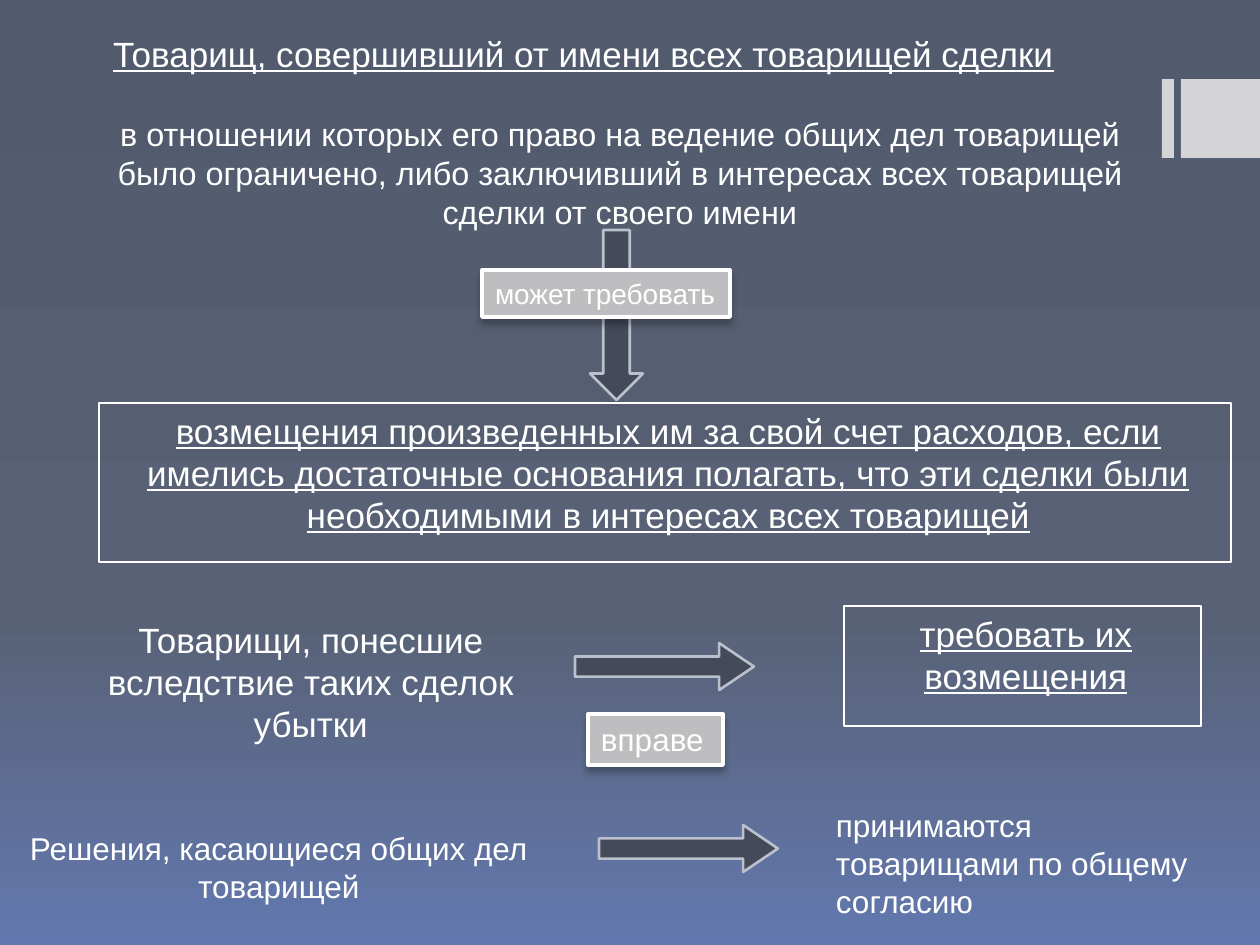
from copy import deepcopy

from pptx import Presentation
from pptx.dml.color import RGBColor
from pptx.enum.shapes import MSO_SHAPE as Shape
from pptx.enum.text import MSO_ANCHOR as Anchor, PP_ALIGN as Align
from pptx.oxml import parse_xml
from pptx.oxml.ns import nsdecls
from pptx.util import Pt

PX = 914400 / 126
WHITE = "FFFFFF"
SHADOW = f"""<a:effectLst {nsdecls('a')}>
  <a:outerShdw blurRad="50800" dist="38100" dir="5400000" rotWithShape="0">
    <a:srgbClr val="000000"><a:alpha val="28000"/></a:srgbClr>
  </a:outerShdw>
</a:effectLst>"""


def add_block(kind, box, fill=None, line=None, line_width=1.5):
    """Add a preset shape at a px box (left, top, width, height)."""
    shape = slide.shapes.add_shape(kind, *(round(v * PX) for v in box))
    shape.shadow.inherit = False
    if fill:
        shape.fill.solid()
        shape.fill.fore_color.rgb = RGBColor.from_string(fill)
    else:
        shape.fill.background()
    if line:
        shape.line.color.rgb = RGBColor.from_string(line)
        shape.line.width = Pt(line_width)
    else:
        shape.line.fill.background()
    return shape


def write(shape, text, size, align=Align.CENTER, underline=False, indent=0, before=0):
    frame = shape.text_frame
    frame.word_wrap = True
    frame.vertical_anchor = Anchor.TOP
    frame.margin_left = round((13 + indent) * PX)
    frame.text = text
    paragraph = frame.paragraphs[0]
    paragraph.alignment = align
    paragraph.space_before = Pt(before)
    font = paragraph.runs[0].font
    font.name = "Arial"
    font.size = Pt(size)
    font.underline = underline
    font.color.rgb = RGBColor.from_string(WHITE)


presentation = Presentation()
presentation.slide_width = round(1260 * PX)
presentation.slide_height = round(945 * PX)
slide = presentation.slides.add_slide(presentation.slide_layouts[6])

# Background gradient, top to bottom
background = slide.background.fill
background.gradient()
background.gradient_angle = 270
stop_list = slide.element.xpath(".//p:bg//a:gsLst")[0]
stop_list.append(deepcopy(stop_list[-1]))
stops = [(0, "525A6D"), (0.65, "586175"), (1, "6278AE")]
for stop, (position, color) in zip(background.gradient_stops, stops):
    stop.position = position
    stop.color.rgb = RGBColor.from_string(color)

# Corner decoration
for left, width in [(1162, 12), (1181, 79)]:
    add_block(Shape.RECTANGLE, (left, 79, width, 79), "D4D4D6")

# Plain texts
texts = [
    ((76, 108, 1081, 118), "в отношении которых его право на ведение общих дел товарищей "
     "было ограничено, либо заключивший в интересах всех товарищей сделки от своего имени",
     18.5, Align.CENTER, False, 6, 2),
    ((94, 26, 992, 78), "Товарищ, совершивший от имени всех товарищей сделки",
     20, Align.LEFT, True, 6, 2),
    ((58, 612, 499, 169), "Товарищи, понесшие вследствие таких сделок убытки",
     20, Align.CENTER, False, 6, 2),
    ((16, 823, 525, 89), "Решения, касающиеся общих дел товарищей",
     18, Align.CENTER, False, 0, 0),
    ((823, 800, 404, 127), "принимаются товарищами по общему согласию",
     18, Align.LEFT, False, 0, 0),
]
for box, *style in texts:
    write(slide.shapes.add_textbox(*(round(v * PX) for v in box)), *style)

# Outlined consequences
outlined = [
    ((99, 403, 1132, 159), "возмещения произведенных им за свой счет расходов, если имелись "
     "достаточные основания полагать, что эти сделки были необходимыми в интересах всех товарищей"),
    ((844, 606, 357, 120), "требовать их возмещения"),
]
for box, text in outlined:
    write(add_block(Shape.RECTANGLE, box, line=WHITE), text, 20,
          underline=True, indent=6, before=2)

# Arrows: one pointing down, two turned to the right
arrows = [
    ((590, 230, 53, 170), 0, (0.5, 0.5)),
    ((641, 577, 47, 179), 270, (0.43, 0.74)),
    ((665, 759, 47, 179), 270, (0.43, 0.74)),
]
for box, rotation, adjustments in arrows:
    arrow = add_block(Shape.DOWN_ARROW, box, "444A5A", "BAC0CC")
    arrow.rotation = rotation
    for index, value in enumerate(adjustments):
        arrow.adjustments[index] = value

# Raised labels on the arrows
labels = [
    ((482, 270, 248, 47), "может требовать", 16),
    ((588, 714, 135, 51), "вправе", 18),
]
for box, text, size in labels:
    label = add_block(Shape.RECTANGLE, box, "BEBEC1", WHITE, 2.25)
    properties = label.element.spPr
    properties.replace(properties.xpath("a:effectLst")[0], parse_xml(SHADOW))
    write(label, text, size, Align.LEFT)

presentation.save("out.pptx")
